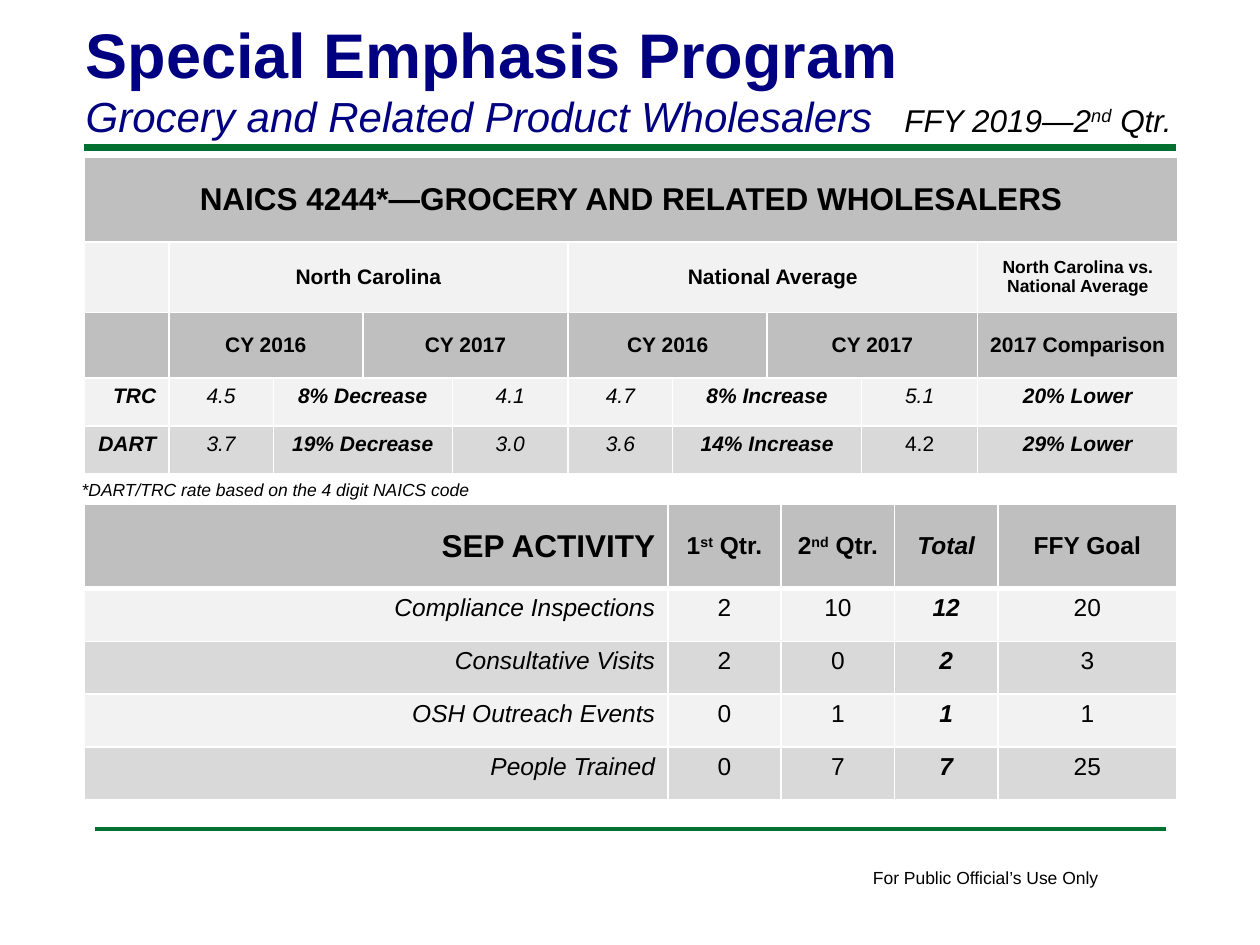
from lxml import etree
from pptx import Presentation
from pptx.dml.color import RGBColor
from pptx.enum.shapes import MSO_CONNECTOR
from pptx.enum.text import MSO_ANCHOR, MSO_AUTO_SIZE, PP_ALIGN
from pptx.oxml.ns import qn
from pptx.util import Inches, Pt

LEFT, CENTER, RIGHT = PP_ALIGN.LEFT, PP_ALIGN.CENTER, PP_ALIGN.RIGHT
TOP, MIDDLE, BOTTOM = MSO_ANCHOR.TOP, MSO_ANCHOR.MIDDLE, MSO_ANCHOR.BOTTOM
NO_FIT = MSO_AUTO_SIZE.NONE
STRAIGHT = MSO_CONNECTOR.STRAIGHT
FONT = "Arial"
COLORS = {"navy": "000080", "green": "007030", "black": "000000", "white": "FFFFFF",
          "head": "BFBFBF", "light": "F2F2F2", "mid": "D9D9D9"}
STYLES = {"": (False, False), "b": (True, False), "i": (False, True), "bi": (True, True)}

RATES = [
    ("TRC", "4.5", "8% Decrease", "4.1", "4.7", "8% Increase", "5.1", "20% Lower"),
    ("DART", "3.7", "19% Decrease", "3.0", "3.6", "14% Increase", "4.2", "29% Lower"),
]
ACTIVITY = [
    ("Compliance Inspections", "2", "10", "12", "20"),
    ("Consultative Visits", "2", "0", "2", "3"),
    ("OSH Outreach Events", "0", "1", "1", "1"),
    ("People Trained", "0", "7", "7", "25"),
]


def rgb(name):
    """Return the named colour."""
    return RGBColor.from_string(COLORS[name])


def write(p, text, size, style="", color="black", align=LEFT):
    """Fill a paragraph run by run; text between carets is superscript."""
    p.alignment = align
    for i, part in enumerate(text.split("^")):
        r = p.add_run()
        r.text = part
        r.font.name, r.font.size = FONT, Pt(size)
        r.font.bold, r.font.italic = STYLES[style]
        r.font.color.rgb = rgb(color)
        if i % 2:
            r.font._element.set("baseline", "30000")


def add_title(slide, title, subtitle):
    """Place the two-line title."""
    sp = slide.shapes.title
    sp.left, sp.top, sp.width, sp.height = map(Inches, (0.58, 0.06, 8.25, 1.11))
    tf = sp.text_frame
    tf.auto_size, tf.vertical_anchor = NO_FIT, BOTTOM
    write(tf.paragraphs[0], title, 36, "b", "navy")
    write(tf.add_paragraph(), subtitle, 24, "i", "navy")


def add_text(slide, box, text, size, style="", wrap=True):
    """Add a one-paragraph text box."""
    tf = slide.shapes.add_textbox(*map(Inches, box)).text_frame
    tf.word_wrap = wrap
    write(tf.paragraphs[0], text, size, style)


def add_rule(slide, x1, x2, y, width):
    """Add a horizontal green rule."""
    line = slide.shapes.add_connector(STRAIGHT, *map(Inches, (x1, y, x2, y)))
    line.line.color.rgb, line.line.width = rgb("green"), Pt(width)
    etree.SubElement(line._element.spPr, qn("a:effectLst"))


def format_cell(cell, fill, bottom=1):
    """Give a cell white borders and a solid fill."""
    tcPr = cell._tc.get_or_add_tcPr()
    for side, width in (("L", 1), ("R", 1), ("T", 1), ("B", bottom)):
        ln = etree.SubElement(tcPr, qn(f"a:ln{side}"), w=str(Pt(width)))
        solid = etree.SubElement(ln, qn("a:solidFill"))
        etree.SubElement(solid, qn("a:srgbClr"), val=COLORS["white"])
    cell.fill.solid()
    cell.fill.fore_color.rgb = rgb(fill)


def add_table(slide, top, cols, rows, fills, head_bottom=1):
    """Add a plain table with filled, bordered cells."""
    box = map(Inches, (0.67, top, sum(cols), sum(rows)))
    table = slide.shapes.add_table(len(rows), len(cols), *box).table
    table.first_row = table.horz_banding = False
    for col, width in zip(table.columns, cols):
        col.width = Inches(width)
    for i, (row, height) in enumerate(zip(table.rows, rows)):
        row.height = Inches(height)
        for cell in row.cells:
            format_cell(cell, fills[i], 1 if i else head_bottom)
    return table


def put(table, row, col, text, size, style="", align=CENTER, anchor=TOP, span=1):
    """Write a cell, merging it across the span."""
    cell = table.cell(row, col)
    if span > 1:
        cell.merge(table.cell(row, col + span - 1))
    cell.vertical_anchor = anchor
    write(cell.text_frame.paragraphs[0], text, size, style, align=align)


def add_rate_table(slide):
    """Add the injury rate comparison."""
    cols = (0.67, 0.83, 0.71, 0.71, 0.92, 0.83, 0.75, 0.75, 0.92, 1.59)
    table = add_table(slide, 1.25, cols, (0.67, 0.56, 0.52, 0.38, 0.38),
                      ("head", "light", "head", "light", "mid"))
    heads = [(0, 0, "NAICS 4244*—GROCERY AND RELATED WHOLESALERS", 18, 10),
             (1, 1, "North Carolina", 12, 4), (1, 5, "National Average", 12, 4),
             (1, 9, "North Carolina vs. National Average", 10, 1),
             (2, 9, "2017 Comparison", 12, 1)]
    heads += [(2, col, f"CY {year}", 12, 2)
              for col, year in zip((1, 3, 5, 7), (2016, 2017) * 2)]
    for row, col, text, size, span in heads:
        put(table, row, col, text, size, "b", anchor=MIDDLE, span=span)
    starts = (0, 1, 2, 4, 5, 6, 8, 9)
    for row, values in enumerate(RATES, 3):
        for col, text in zip(starts, values):
            style = "bi" if col in (0, 2, 6, 9) else "i"
            if text == "4.2":
                style = ""
            put(table, row, col, text, 12, style, CENTER if col else RIGHT,
                span=2 if col in (2, 6) else 1)


def add_activity_table(slide):
    """Add the quarterly activity counts."""
    table = add_table(slide, 4, (4.63, 0.9, 0.9, 0.82, 1.42), (0.67,) + (0.42,) * 4,
                      ("head",) + ("light", "mid") * 2, head_bottom=3)
    heads = ("SEP ACTIVITY", "1^st^ Qtr.", "2^nd^ Qtr.", "Total", "FFY Goal")
    for col, text in enumerate(heads):
        put(table, 0, col, text, 14 if col else 18, "bi" if col == 3 else "b",
            CENTER if col else RIGHT, MIDDLE)
    for row, values in enumerate(ACTIVITY, 1):
        for col, (text, style) in enumerate(zip(values, ("i", "", "", "bi", ""))):
            put(table, row, col, text, 14, style, CENTER if col else RIGHT)


def main():
    """Build and save the slide."""
    prs = Presentation()
    prs.slide_width, prs.slide_height = Inches(10), Inches(7.5)
    s = prs.slides.add_slide(prs.slide_layouts[5])
    add_rule(s, 0.67, 9.33, 1.17, 4)
    add_rule(s, 0.75, 9.25, 6.58, 2)
    add_text(s, (6.83, 6.83, 2.01, 0.27), "For Public Official’s Use Only", 10, wrap=False)
    add_title(s, "Special Emphasis Program", "Grocery and Related Product Wholesalers")
    add_rate_table(s)
    add_text(s, (0.55, 3.75, 3.37, 0.27),
             "*DART/TRC rate based on the 4 digit NAICS code", 10, "i")
    add_activity_table(s)
    add_text(s, (7.08, 0.75, 2.5, 0.4), "FFY 2019—2^nd^ Qtr.", 18, "i")
    prs.save("out.pptx")


if __name__ == "__main__":
    main()
